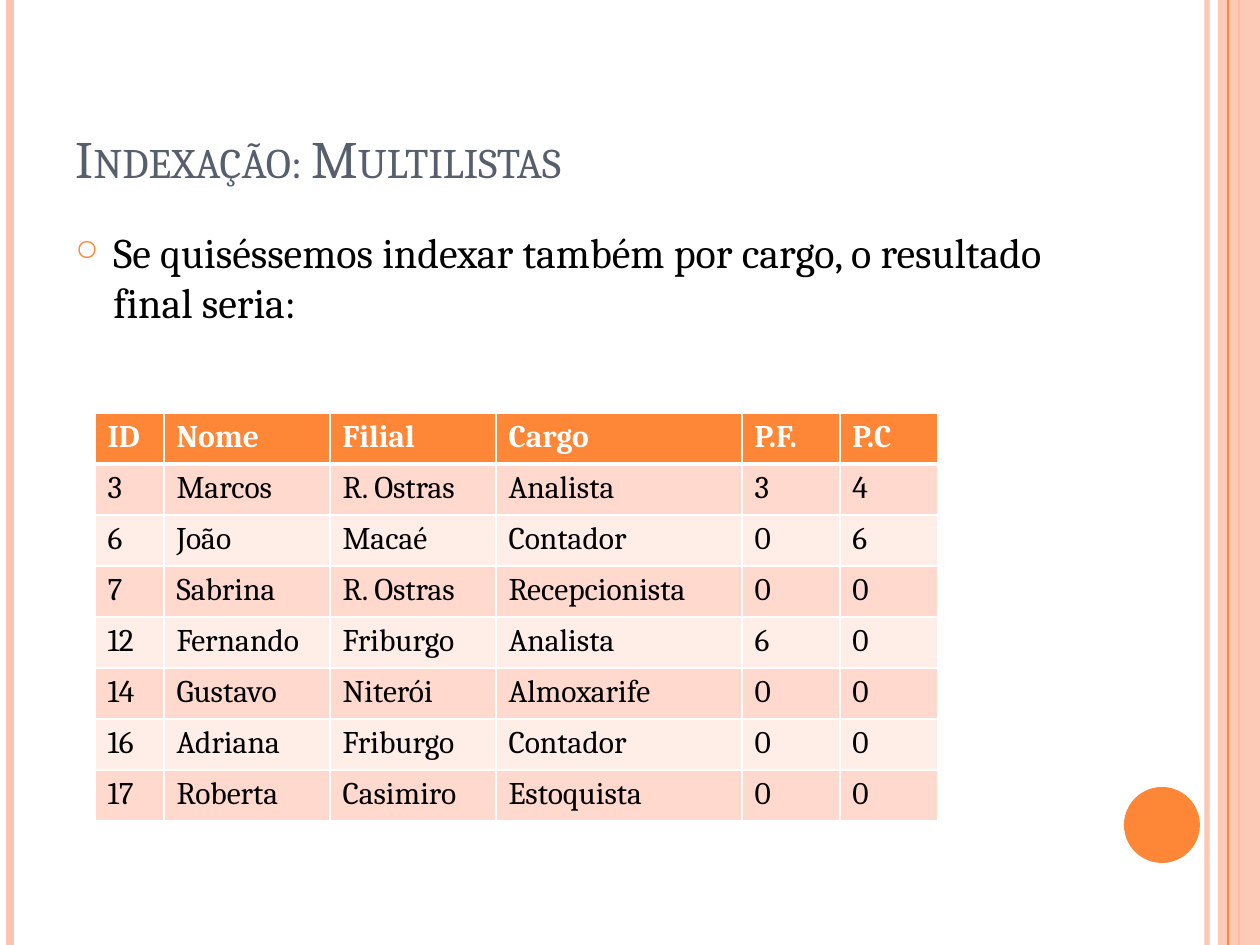
from dataclasses import dataclass

from lxml.etree import SubElement as Sub
from pptx import Presentation
from pptx.dml.color import RGBColor as RGB
from pptx.enum.shapes import MSO_CONNECTOR as Link, MSO_SHAPE as Shape
from pptx.enum.text import MSO_ANCHOR as Anchor
from pptx.oxml.ns import qn
from pptx.util import Emu, Pt


@dataclass(frozen=True)
class Theme:
    font: str = "Cambria"
    orange: str = "FE8637"
    peach: str = "FEC3AE"
    slate: str = "575F6D"
    black: str = "000000"
    white: str = "FFFFFF"
    bands: tuple = ("FFD9CE", "FFEDE8")
    title: int = 30
    body: int = 24
    cell: int = 18


THEME = Theme()
WIDE, HIGH = 1260, 945

TITLE = "Indexação: Multilistas"
BODY = "Se quiséssemos indexar também por cargo, o resultado final seria:"
COLS = (69, 166, 166, 246, 98, 98)
ROW = 51
STAFF = (
    ("ID", "Nome", "Filial", "Cargo", "P.F.", "P.C"),
    ("3", "Marcos", "R. Ostras", "Analista", "3", "4"),
    ("6", "João", "Macaé", "Contador", "0", "6"),
    ("7", "Sabrina", "R. Ostras", "Recepcionista", "0", "0"),
    ("12", "Fernando", "Friburgo", "Analista", "6", "0"),
    ("14", "Gustavo", "Niterói", "Almoxarife", "0", "0"),
    ("16", "Adriana", "Friburgo", "Contador", "0", "0"),
    ("17", "Roberta", "Casimiro", "Estoquista", "0", "0"),
)


def px(n):
    return Emu(round(n * 914400 / 126))


def paint(fill, color):
    fill.solid()
    fill.fore_color.rgb = RGB.from_string(color)


def fade(node, share):
    """Set the opacity, in percent, of the first colour under node."""
    color = next(node.iter(qn("a:srgbClr")))
    Sub(color, qn("a:alpha"), val=str(share * 1000))


def style(para, size, color, bold=False):
    for run in para.runs:
        font = run.font
        font.name, font.size, font.bold = THEME.font, Pt(size), bold
        font.color.rgb = RGB.from_string(color)


def add_rule(slide, x, color, width, share=100):
    rule = slide.shapes.add_connector(Link.STRAIGHT, px(x), 0, px(x), px(HIGH))
    rule.line.width = Pt(width)
    paint(rule.line.fill, color)
    props = rule._element.spPr
    Sub(props, qn("a:effectLst"))
    if share < 100:
        fade(props, share)


def add_form(slide, kind, box, color, share=100):
    form = slide.shapes.add_shape(kind, *map(px, box))
    form.shadow.inherit = False
    form.line.fill.background()
    paint(form.fill, color)
    if share < 100:
        fade(form._element.spPr, share)


def add_text(slide, box, text, size, color, anchor=Anchor.TOP):
    frame = slide.shapes.add_textbox(*map(px, box)).text_frame
    frame.word_wrap = True
    frame.vertical_anchor = anchor
    frame.text = text
    para = frame.paragraphs[0]
    style(para, size, color)
    return para


def add_bullet(para, mark, color, share, indent):
    props = para._p.get_or_add_pPr()
    props.set("marL", str(px(indent)))
    props.set("indent", str(-px(indent)))
    tint = Sub(props, qn("a:buClr"))
    Sub(tint, qn("a:srgbClr"), val=color)
    Sub(props, qn("a:buSzPct"), val=str(share * 1000))
    Sub(props, qn("a:buChar"), char=mark)


def add_edges(cell, color, widths):
    props = cell._tc.get_or_add_tcPr()
    for side, width in zip("LRTB", widths):
        edge = Sub(props, qn(f"a:ln{side}"), w=str(Pt(width)))
        Sub(Sub(edge, qn("a:solidFill")), qn("a:srgbClr"), val=color)


def add_grid(slide, x, y, rows):
    size = px(x), px(y), px(sum(COLS)), px(ROW * len(rows))
    grid = slide.shapes.add_table(len(rows), len(COLS), *size).table
    for col, width in zip(grid.columns, COLS):
        col.width = px(width)
    for i, row in enumerate(rows):
        grid.rows[i].height = px(ROW)
        head = i == 0
        back = THEME.orange if head else THEME.bands[(i - 1) % 2]
        ink = THEME.white if head else THEME.black
        # A thick edge parts the header from the rows below
        widths = (1, 1, 3 if i == 1 else 1, 3 if head else 1)
        for j, text in enumerate(row):
            cell = grid.cell(i, j)
            add_edges(cell, THEME.white, widths)
            paint(cell.fill, back)
            cell.text = text
            style(cell.text_frame.paragraphs[0], THEME.cell, ink, head)


def main():
    deck = Presentation()
    deck.slide_width, deck.slide_height = px(WIDE), px(HIGH)
    slide = deck.slides.add_slide(deck.slide_layouts[6])
    paint(slide.background.fill, THEME.white)

    # Side bands and disc
    add_rule(slide, 1207, THEME.peach, 3, 93)
    add_rule(slide, 10, THEME.peach, 4.5)
    add_rule(slide, 1239, THEME.orange, 1.5)
    add_form(slide, Shape.RECTANGLE, (1218, 0, 42, HIGH), THEME.peach, 87)
    add_rule(slide, 1228, THEME.orange, 0.75)
    add_form(slide, Shape.OVAL, (1124, 787, 76, 76), THEME.orange)

    # Title in small capitals
    title = add_text(slide, (63, 38, 1029, 157), TITLE,
                     THEME.title, THEME.slate, Anchor.BOTTOM)
    title.runs[0]._r.get_or_add_rPr().set("cap", "small")

    # Lead sentence
    lead = add_text(slide, (63, 220, 1029, 142), BODY, THEME.body, THEME.black)
    lead.space_before = Pt(6)
    add_bullet(lead, "○", THEME.orange, 70, 38)

    # Staff table
    add_grid(slide, 95, 413, STAFF)

    deck.save("out.pptx")


if __name__ == "__main__":
    main()
